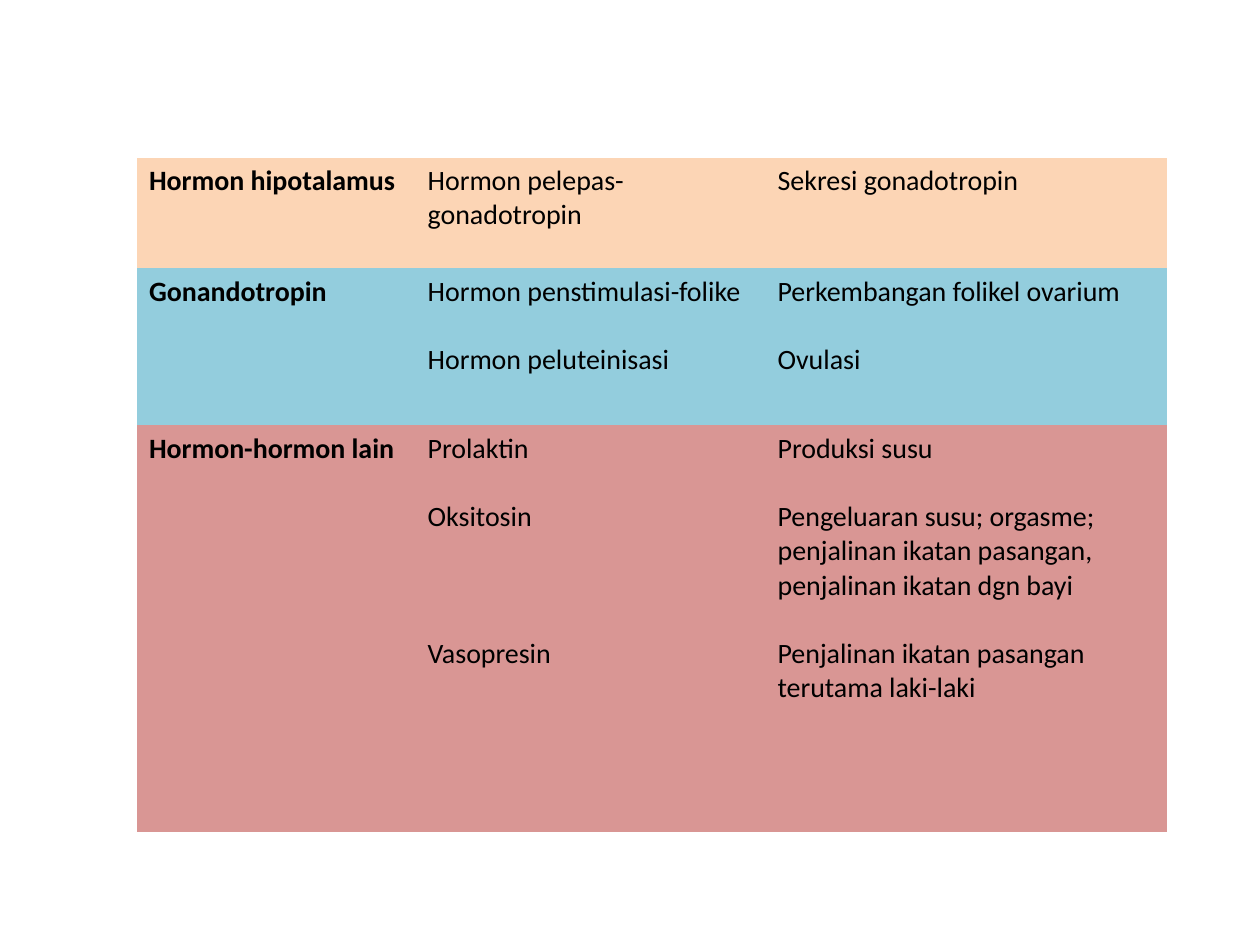
from pptx import Presentation
from pptx.dml.color import RGBColor
from pptx.util import Pt

BLACK = RGBColor(0x00, 0x00, 0x00)
PEACH = RGBColor(0xFC, 0xD5, 0xB5)
AQUA = RGBColor(0x93, 0xCD, 0xDD)
ROSE = RGBColor(0xD9, 0x96, 0x94)
NO_STYLE_NO_GRID = "{2D5ABB26-0587-4C30-8999-92F81FD0307C}"
LINE = 19.55

COLUMN_WIDTHS = [159.2, 200, 229.6]
HORMONE_ROWS = [
    (63.2, PEACH, [
        [("Hormon hipotalamus", 0)],
        [("Hormon pelepas-gonadotropin", 0)],
        [("Sekresi gonadotropin", 0)],
    ]),
    (89.8, AQUA, [
        [("Gonandotropin", 0)],
        [("Hormon penstimulasi-folike", 0), ("Hormon peluteinisasi", 1)],
        [("Perkembangan folikel ovarium", 0), ("Ovulasi", 1)],
    ]),
    (232.4, ROSE, [
        [("Hormon-hormon lain", 0)],
        [("Prolaktin", 0), ("Oksitosin", 1), ("Vasopresin", 3)],
        [
            ("Produksi susu", 0),
            ("Pengeluaran susu; orgasme; penjalinan ikatan pasangan, "
             "penjalinan ikatan dgn bayi", 1),
            ("Penjalinan ikatan pasangan terutama laki-laki", 1),
        ],
    ]),
]

deck = Presentation()
deck.slide_width = Pt(720)
deck.slide_height = Pt(540)
page = deck.slides.add_slide(deck.slide_layouts[6])

height = sum(row[0] for row in HORMONE_ROWS)
frame = page.shapes.add_table(
    len(HORMONE_ROWS), len(COLUMN_WIDTHS),
    Pt(78), Pt(90), Pt(sum(COLUMN_WIDTHS)), Pt(height))
table = frame.table
table.first_row = False
table.horz_banding = False
table._tbl.tblPr[0].text = NO_STYLE_NO_GRID

for column, width in zip(table.columns, COLUMN_WIDTHS):
    column.width = Pt(width)

for row, (row_height, colour, entries) in zip(table.rows, HORMONE_ROWS):
    row.height = Pt(row_height)
    for index, (cell, lines) in enumerate(zip(row.cells, entries)):
        cell.fill.solid()
        cell.fill.fore_color.rgb = colour
        cell.text_frame.text = "\n".join(line for line, gap in lines)
        for para, (line, gap) in zip(cell.text_frame.paragraphs, lines):
            if gap:
                para.space_before = Pt(round(gap * LINE, 1))
            for span in para.runs:
                span.font.name = "Calibri"
                span.font.size = Pt(16)
                span.font.bold = index == 0
                span.font.color.rgb = BLACK

deck.save("out.pptx")
